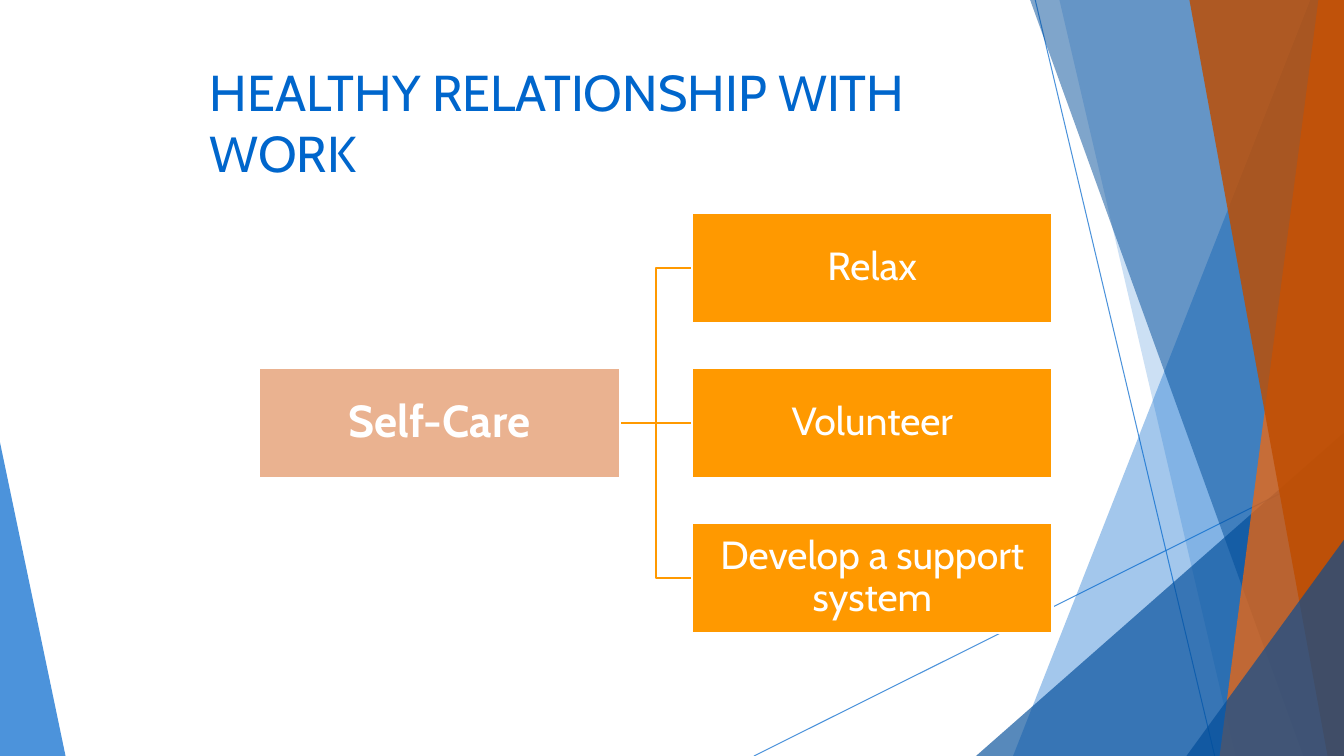
from pptx import Presentation
from pptx.dml.color import RGBColor
from pptx.enum.shapes import MSO_CONNECTOR, MSO_SHAPE
from pptx.enum.text import MSO_ANCHOR, PP_ALIGN
from pptx.oxml.ns import qn
from pptx.util import Inches, Pt
from lxml import etree

ELBOW, STRAIGHT = MSO_CONNECTOR.ELBOW, MSO_CONNECTOR.STRAIGHT
RECTANGLE = MSO_SHAPE.RECTANGLE
TOP, MIDDLE = MSO_ANCHOR.TOP, MSO_ANCHOR.MIDDLE
CENTER = PP_ALIGN.CENTER
LEFT_SIDE, RIGHT_SIDE = 1, 3

COLORS = {
    "blue": "0066CC", "navy": "004C99", "orange": "FF6600", "rust": "BF4D00",
    "amber": "FF9900", "peach": "EAB290", "white": "FFFFFF",
}
FONT = "Cabin"
COLUMN_GAP = 0.2  # share of a box's width
ROW_GAP = 0.41    # share of a box's height

# Corners in percent of the slide, then colour and opacity in percent
LEFT_FACET = ([(0, 58.5), (4.88, 100), (0, 100)], "blue", 70)
RIGHT_FACETS = [
    ([(97.5, 0), (75.38, 100), (100, 100), (100, 0)], "blue", 36),
    ([(78.83, 0), (91.95, 100), (100, 100), (100, 0)], "blue", 20),
    ([(72.62, 100), (100, 57.2), (100, 100)], "navy", 66),
    ([(76.65, 0), (96.98, 100), (100, 100), (100, 0)], "navy", 50),
    ([(98.1, 0), (90.75, 100), (100, 100), (100, 0)], "orange", 70),
    ([(88.5, 0), (98.78, 100), (100, 100), (100, 0)], "rust", 82),
    ([(88.28, 100), (100, 71.4), (100, 100)], "navy", 66),
]
RAYS = [((56.1, 100), (100, 61.07)), ((77.03, 0), (90.38, 100))]


def rgb(name):
    return RGBColor.from_string(COLORS[name])


def set_opacity(color_format, percent):
    """Add an alpha value to the solid colour of a fill or line."""
    color = color_format._xFill.find(qn("a:srgbClr"))
    etree.SubElement(color, qn("a:alpha")).set("val", str(percent * 1000))


def point_in(box, point):
    left, top, width, height = box
    return (round(left + width * point[0] / 100),
            round(top + height * point[1] / 100))


def add_facet(slide, box, corners, color, opacity):
    start, *others = [point_in(box, corner) for corner in corners]
    builder = slide.shapes.build_freeform(*start, scale=1.0)
    builder.add_line_segments(others, close=True)
    facet = builder.convert_to_shape()
    facet.shadow.inherit = False
    facet.fill.solid()
    facet.fill.fore_color.rgb = rgb(color)
    set_opacity(facet.fill.fore_color, opacity)
    facet.line.fill.background()


def add_line(slide, kind, start, end, color, width):
    line = slide.shapes.add_connector(kind, *start, *end)
    line.line.color.rgb = rgb(color)
    line.line.width = Pt(width)
    etree.SubElement(line._element.spPr, qn("a:effectLst"))
    return line


def add_backdrop(slide, box):
    add_facet(slide, box, *LEFT_FACET)
    for start, end in RAYS:
        ray = add_line(slide, STRAIGHT, point_in(box, start),
                       point_in(box, end), "blue", 0.75)
        set_opacity(ray.line.color, 70)
    for facet in RIGHT_FACETS:
        add_facet(slide, box, *facet)


def style_paragraph(paragraph, size, color, bold=False):
    font = paragraph.font
    font.name, font.size, font.bold = FONT, Pt(size), bold
    font.color.rgb = rgb(color)


def add_title(slide, box, text):
    frame = slide.shapes.add_textbox(*box).text_frame
    frame.word_wrap = True
    frame.vertical_anchor = TOP
    frame.text = text
    style_paragraph(frame.paragraphs[0], 36, "blue")


def add_node(slide, box, text, fill, size, bold=False):
    node = slide.shapes.add_shape(RECTANGLE, *box)
    node.shadow.inherit = False
    node.fill.solid()
    node.fill.fore_color.rgb = rgb(fill)
    node.line.color.rgb = rgb("white")
    node.line.width = Pt(1.5)
    frame = node.text_frame
    frame.word_wrap = True
    frame.vertical_anchor = MIDDLE
    frame.margin_left = frame.margin_right = Inches(0.02)
    frame.margin_top = frame.margin_bottom = Inches(0.02)
    frame.text = text
    paragraph = frame.paragraphs[0]
    paragraph.alignment = CENTER
    paragraph.line_spacing = 0.9
    style_paragraph(paragraph, size, "white", bold)
    return node


def add_hierarchy(slide, box, root_text, branch_texts):
    """Place a root on the left, joined to evenly spaced branches."""
    left, top, width, height = box
    count = len(branch_texts)
    node_width = round(width / (2 + COLUMN_GAP))
    node_height = round(height / (count + (count - 1) * ROW_GAP))
    branch_left = left + width - node_width
    root_top = top + (height - node_height) // 2
    branch_tops = [top + round(row * node_height * (1 + ROW_GAP))
                   for row in range(count)]

    # Lines come first so that the white outlines cover their ends
    half = node_height // 2
    links = [add_line(slide, STRAIGHT if row * 2 == count - 1 else ELBOW,
                      (left + node_width, root_top + half),
                      (branch_left, branch_top + half), "amber", 1.5)
             for row, branch_top in enumerate(branch_tops)]
    root = add_node(slide, (left, root_top, node_width, node_height),
                    root_text, "peach", 32, bold=True)
    for link, branch_top, text in zip(links, branch_tops, branch_texts):
        branch = add_node(
            slide, (branch_left, branch_top, node_width, node_height),
            text, "amber", 28)
        link.begin_connect(root, RIGHT_SIDE)
        link.end_connect(branch, LEFT_SIDE)


def main():
    deck = Presentation()
    deck.slide_width, deck.slide_height = Inches(13.33), Inches(7.5)
    slide = deck.slides.add_slide(deck.slide_layouts[6])
    page = (0, 0, deck.slide_width, deck.slide_height)

    def region(left, top, width, height):
        return (*point_in(page, (left, top)), *point_in(page, (width, height)))

    add_backdrop(slide, page)
    add_title(slide, region(14.85, 7.47, 62.72, 16),
              "HEALTHY RELATIONSHIP WITH WORK")
    add_hierarchy(slide, region(19.28, 28.13, 59.04, 55.6), "Self-Care",
                  ["Relax", "Volunteer", "Develop a support system"])
    deck.save("out.pptx")


if __name__ == "__main__":
    main()
